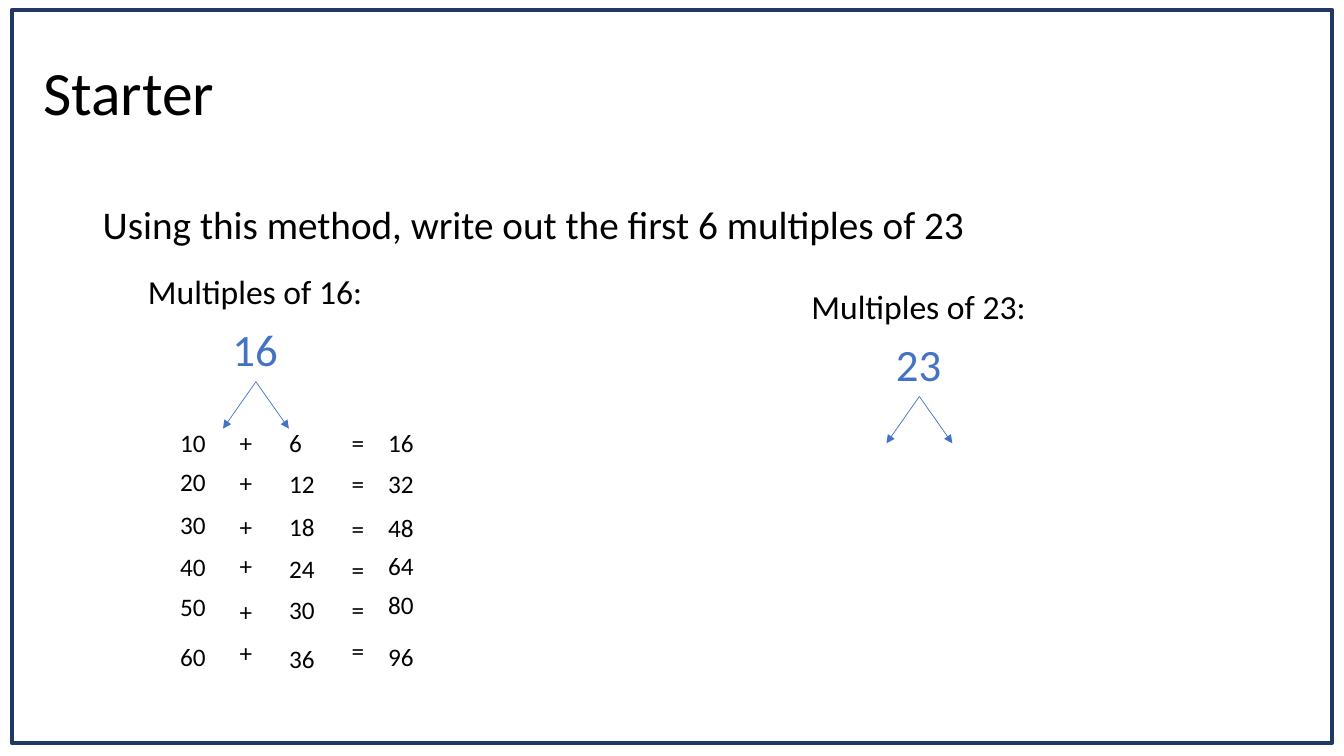
import pptx
import pptx.util
import pptx.dml.color
import pptx.enum.shapes
import pptx.enum.text
import pptx.oxml.ns
import lxml.etree

Cm = pptx.util.Cm
Pt = pptx.util.Pt
RGB = pptx.dml.color.RGBColor

TITLE = "Starter"
TASK = "Using this method, write out the first 6 multiples of 23"
SPLITS = [
    {"number": 16, "left": 3.48, "top": 6.71},
    {"number": 23, "left": 20.2, "top": 7.08},
]
TENS, UNITS = 10, 6
COLUMNS = [
    {"left": 4.29, "tops": [10.64, 11.63, 12.7, 13.77, 14.78, 16.03]},
    {"left": 5.79, "tops": [10.64, 11.66, 12.75, 13.74, 14.91, 15.93]},
    {"left": 7.04, "tops": [10.64, 11.68, 12.75, 13.82, 14.86, 16.08]},
    {"left": 8.61, "tops": [10.64, 11.68, 12.8, 13.84, 14.86, 15.88]},
    {"left": 9.53, "tops": [10.64, 11.68, 12.78, 13.74, 14.73, 16.03]},
]
THEME = {
    "font": "Calibri",
    "text": RGB(0x00, 0x00, 0x00),
    "accent": RGB(0x44, 0x72, 0xC4),
    "frame": RGB(0x20, 0x38, 0x64),
    "title": 44, "task": 28, "heading": 24, "number": 32, "sum": 18,
}

deck = pptx.Presentation()
deck.slide_width, deck.slide_height = Cm(33.87), Cm(19.05)
slide = deck.slides.add_slide(deck.slide_layouts[6])


def write(words, left, top, width, height, role, color="text", wrap=False):
    box = slide.shapes.add_textbox(Cm(left), Cm(top), Cm(width), Cm(height))
    frame = box.text_frame
    frame.word_wrap = wrap
    if not wrap:
        frame.auto_size = pptx.enum.text.MSO_AUTO_SIZE.SHAPE_TO_FIT_TEXT
    run = frame.paragraphs[0].add_run()
    run.text = words
    run.font.name = THEME["font"]
    run.font.size = Pt(THEME[role])
    run.font.color.rgb = THEME[color]
    return box


def draw_arrow(number, x, y):
    arrow = slide.shapes.add_connector(
        pptx.enum.shapes.MSO_CONNECTOR.STRAIGHT, Cm(x), Cm(y), Cm(x), Cm(y))
    arrow.begin_connect(number, 2)
    arrow.end_x, arrow.end_y = Cm(x), Cm(y)
    arrow.line.color.rgb = THEME["accent"]
    arrow.line.width = Pt(0.5)
    qn = pptx.oxml.ns.qn
    lxml.etree.SubElement(arrow.line._get_or_add_ln(), qn("a:tailEnd"), type="triangle")
    lxml.etree.SubElement(arrow._element.spPr, qn("a:effectLst"))


title = write(TITLE, 0.84, 0.58, 29.21, 3.68, "title", wrap=True)
title.text_frame.vertical_anchor = pptx.enum.text.MSO_ANCHOR.MIDDLE
title.text_frame.paragraphs[0].line_spacing = 0.9

task = write(TASK, 2.34, 5.05, 29.21, 1.68, "task", wrap=True)
task.text_frame.paragraphs[0].line_spacing = 0.9
task.text_frame.paragraphs[0].space_before = Pt(10)

border = slide.shapes.add_shape(
    pptx.enum.shapes.MSO_SHAPE.RECTANGLE, Cm(0.3), Cm(0.25), Cm(33.27), Cm(18.47))
border.shadow.inherit = False
border.fill.background()
border.line.color.rgb = THEME["frame"]
border.line.width = Pt(3)

for split in SPLITS:
    left, top = split["left"], split["top"]
    write(f"Multiples of {split['number']}:", left, top, 5.97, 1.27, "heading")
    number = write(str(split["number"]), left + 2.13, top + 1.28, 1.68, 1.63,
                   "number", "accent")
    for reach in (-0.83, 0.83):
        draw_arrow(number, left + 2.97 + reach, top + 4.09)

for row in range(6):
    tens, units = TENS * (row + 1), UNITS * (row + 1)
    for column, entry in zip(COLUMNS, (tens, "+", units, "=", tens + units)):
        words = str(entry)
        width = 0.84 if len(words) == 1 else 1.17
        write(words, column["left"], column["tops"][row], width, 1.02, "sum")

deck.save("out.pptx")
